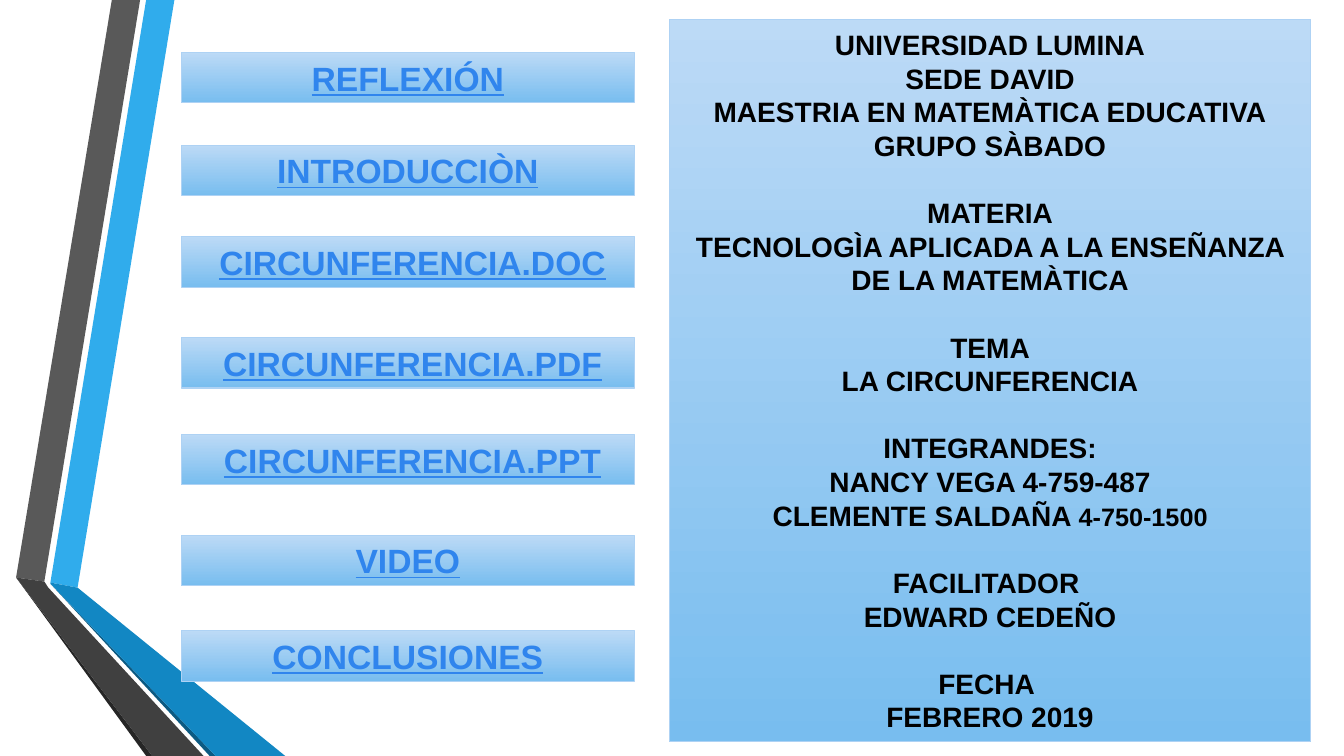
from dataclasses import dataclass

from pptx import Presentation
from pptx.dml.color import RGBColor
from pptx.enum import shapes, text
from pptx.util import Inches, Pt


@dataclass(frozen=True)
class Theme:
    font: str = "Arial"
    link_size: int = 24
    body_size: int = 20
    small_size: int = 18
    line_pitch: int = 24
    ink: str = "000000"
    link: str = "3085ED"
    panel_top: str = "BCDAF6"
    panel_bottom: str = "78BDEF"
    panel_line: str = "AED2F4"
    blue: str = "30ACEC"
    blue_mid: str = "1287C3"
    blue_dark: str = "0C5A82"
    gray: str = "595959"
    gray_mid: str = "404040"
    gray_dark: str = "262626"


THEME = Theme()

RIBBONS = [
    (THEME.blue, [(0.5, 5.78), (0.77, 5.83), (1.73, 0), (1.45, 0)]),
    (THEME.gray, [(1.39, 0), (1.11, 0), (0.16, 5.73), (0.44, 5.77)]),
    (THEME.gray_dark, [(0.16, 5.73), (1.45, 7.5), (1.51, 7.5)]),
    (THEME.blue_dark, [(0.5, 5.79), (2.08, 7.5), (2.14, 7.5)]),
    (THEME.blue_mid, [(0.5, 5.79), (2.14, 7.5), (2.83, 7.5), (0.77, 5.83), (0.5, 5.78)]),
    (THEME.gray_mid, [(2.02, 7.5), (0.48, 5.83), (0.44, 5.77), (0.16, 5.73), (1.51, 7.5)]),
]

MENU = [
    (0.52, "REFLEXIÓN"),
    (1.44, "INTRODUCCIÒN"),
    (2.35, " CIRCUNFERENCIA.DOC"),
    (3.35, " CIRCUNFERENCIA.PDF"),
    (4.31, " CIRCUNFERENCIA.PPT"),
    (5.31, "VIDEO"),
    (6.26, "CONCLUSIONES"),
]

CREDITS = [
    ["UNIVERSIDAD LUMINA", "SEDE DAVID", "MAESTRIA EN MATEMÀTICA EDUCATIVA", "GRUPO SÀBADO"],
    ["MATERIA", "TECNOLOGÌA APLICADA A LA ENSEÑANZA DE LA MATEMÀTICA"],
    ["TEMA", "LA CIRCUNFERENCIA"],
    ["INTEGRANDES:", "NANCY VEGA 4-759-487", ("CLEMENTE SALDAÑA ", "4-750-1500")],
    ["FACILITADOR ", "EDWARD CEDEÑO"],
    ["FECHA ", "FEBRERO 2019"],
]


def add_text(p, content, size, color=THEME.ink, underline=None):
    r = p.add_run()
    r.text = content
    r.font.name = THEME.font
    r.font.size = Pt(size)
    r.font.bold = True
    r.font.underline = underline
    r.font.color.rgb = RGBColor.from_string(color)


class SlideBuilder:
    def __init__(self, slide, theme):
        self.slide = slide
        self.theme = theme

    def ribbon(self, color, points):
        start, *rest = [(Inches(x), Inches(y)) for x, y in points]
        builder = self.slide.shapes.build_freeform(*start)
        builder.add_line_segments(rest, close=True)
        sp = builder.convert_to_shape()
        sp.shadow.inherit = False
        sp.fill.solid()
        sp.fill.fore_color.rgb = RGBColor.from_string(color)
        sp.line.fill.background()

    def panel(self, left, top, width, height):
        """Add a gradient rectangle and return its text frame."""
        sp = self.slide.shapes.add_shape(
            shapes.MSO_SHAPE.RECTANGLE,
            Inches(left), Inches(top), Inches(width), Inches(height))
        sp.shadow.inherit = False
        sp.fill.gradient()
        sp.fill.gradient_angle = 270
        colors = (self.theme.panel_top, self.theme.panel_bottom)
        for stop, color in zip(sp.fill.gradient_stops, colors):
            stop.color.rgb = RGBColor.from_string(color)
        sp.line.color.rgb = RGBColor.from_string(self.theme.panel_line)
        sp.line.width = Pt(0.75)
        tf = sp.text_frame
        tf.word_wrap = True
        tf.vertical_anchor = text.MSO_ANCHOR.MIDDLE
        return tf

    def menu_button(self, top, label):
        p = self.panel(1.8, top, 4.49, 0.5).paragraphs[0]
        p.alignment = text.PP_ALIGN.CENTER
        if label.startswith(" "):
            add_text(p, " ", self.theme.link_size)
        add_text(p, label.lstrip(), self.theme.link_size,
                 color=self.theme.link, underline=True)

    def credits(self, groups):
        tf = self.panel(6.64, 0.19, 6.36, 7.17)
        pitch = Pt(self.theme.line_pitch)
        p = tf.paragraphs[0]
        for g, group in enumerate(groups):
            for i, line in enumerate(group):
                if g or i:
                    p = tf.add_paragraph()
                p.alignment = text.PP_ALIGN.CENTER
                p.line_spacing = pitch
                p.space_before = pitch if g and i == 0 else Pt(0)
                main, *small = line if isinstance(line, tuple) else (line,)
                add_text(p, main, self.theme.body_size)
                for part in small:
                    add_text(p, part, self.theme.small_size)


def main():
    prs = Presentation()
    prs.slide_width, prs.slide_height = Inches(13.33), Inches(7.5)
    builder = SlideBuilder(prs.slides.add_slide(prs.slide_layouts[6]), THEME)
    for color, points in RIBBONS:
        builder.ribbon(color, points)
    for top, label in MENU:
        builder.menu_button(top, label)
    builder.credits(CREDITS)
    prs.save("out.pptx")


if __name__ == "__main__":
    main()
